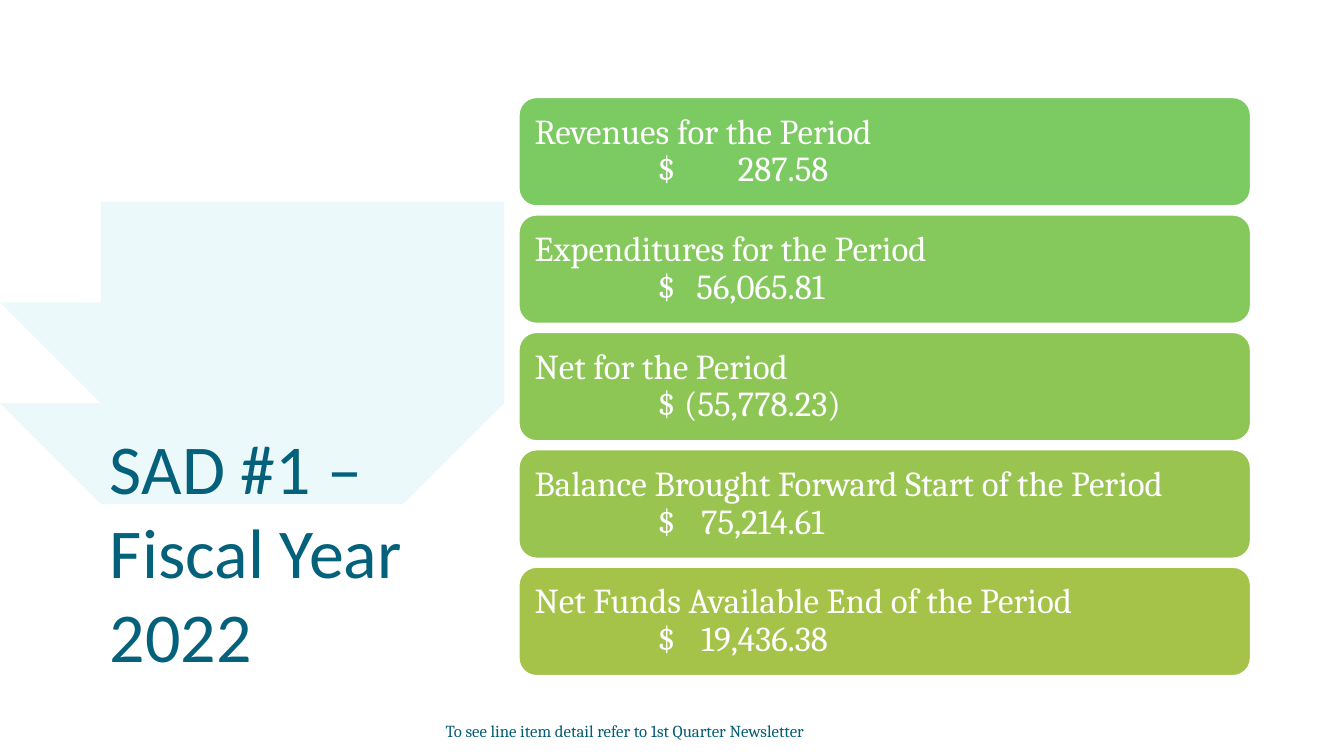
import pptx
import pptx.util
import pptx.dml.color
import pptx.enum.shapes
import pptx.enum.text
import pptx.oxml.ns
import lxml.etree

Inches = pptx.util.Inches
Pt = pptx.util.Pt
ANCHOR = pptx.enum.text.MSO_ANCHOR


def color(hex_string):
    return pptx.dml.color.RGBColor.from_string(hex_string)


def prepare_text(shape, anchor, left=0, bottom=0):
    frame = shape.text_frame
    frame.word_wrap = True
    frame.vertical_anchor = anchor
    frame.margin_left = Inches(left)
    frame.margin_right = frame.margin_top = 0
    frame.margin_bottom = Inches(bottom)
    return frame.paragraphs[0]


deck = pptx.Presentation()
deck.slide_width = Inches(13.33)
deck.slide_height = Inches(7.5)
slide = deck.slides.add_slide(deck.slide_layouts[6])

brush_outline = [
    (4.58, 1.5), (4.57, 1.59), (4.72, 1.59), (4.74, 1.77), (4.88, 1.98), (4.79, 2.25),
    (4.86, 2.35), (4.75, 2.49), (4.93, 2.6), (4.82, 2.89), (4.96, 2.95), (5.14, 3.3),
    (5.03, 3.61), (4.76, 3.99), (4.4, 4.51), (3.99, 4.85), (3.33, 5.22), (2.49, 5.42),
    (1.39, 5.38), (0.96, 5.18), (0.66, 5.05), (1.02, 5.04), (0.66, 4.86), (0.8, 4.84),
    (0.36, 4.49), (0.6, 4.53), (0.19, 4.29), (0.41, 4.27), (0.2, 4.17), (0.39, 4.11),
    (0.51, 3.96), (0.51, 3.72), (0.35, 3.6), (0.63, 3.52), (0.25, 3.29), (0.3, 3.06),
    (0.78, 3.08), (0.4, 2.77), (0.32, 2.54), (0.67, 2.74), (0.28, 2.26), (0.45, 2.27),
    (1.17, 2.71), (0.56, 2.23), (0.46, 1.82), (0.6, 1.83), (1.3, 2.25), (1.92, 2.34),
    (2.6, 2.27), (3.17, 2.17), (3.61, 2.03), (4.02, 1.82), (4.38, 1.69),
]
builder = slide.shapes.build_freeform(*brush_outline[0], scale=Inches(1))
builder.add_line_segments(brush_outline[1:], close=True)
brush = builder.convert_to_shape()
brush.shadow.inherit = False
brush.fill.solid()
brush.fill.fore_color.rgb = color("DBF5F9")
brush.line.fill.background()
brush_color = brush._element.spPr.find(".//" + pptx.oxml.ns.qn("a:srgbClr"))
lxml.etree.SubElement(brush_color, pptx.oxml.ns.qn("a:alpha"), val="50000")

captions = [
    ("SAD #1 – Fiscal Year 2022", 1.09, 0.75, 3.82, 6.01, 0.05, "Calibri", 50, "04617B"),
    ("To see line item detail refer to 1st Quarter Newsletter",
     4.42, 6.95, 4.5, 0.4, 0, "Cambria", 12, "045D75"),
]
for text, left, top, width, height, bottom, font, size, shade in captions:
    box = slide.shapes.add_textbox(Inches(left), Inches(top), Inches(width), Inches(height))
    para = prepare_text(box, ANCHOR.BOTTOM, bottom=bottom)
    para.text = text
    para.font.name = font
    para.font.size = Pt(size)
    para.font.color.rgb = color(shade)

balances = [
    ("Revenues for the Period", "287.58", "7CCA62"),
    ("Expenditures for the Period", "56,065.81", "85C85C"),
    ("Net for the Period", "(55,778.23)", "8EC656"),
    ("Balance Brought Forward Start of the Period", "75,214.61", "99C44F"),
    ("Net Funds Available End of the Period", "19,436.38", "A5C249"),
]
first_top = 0.96
pitch = (5.62 - first_top) / (len(balances) - 1)
for index, (label, amount, shade) in enumerate(balances):
    bar = slide.shapes.add_shape(
        pptx.enum.shapes.MSO_SHAPE.ROUNDED_RECTANGLE,
        Inches(5.14), Inches(first_top + index * pitch), Inches(7.27), Inches(1.09))
    bar.shadow.inherit = False
    bar.fill.solid()
    bar.fill.fore_color.rgb = color(shade)
    bar.line.color.rgb = color("FFFFFF")
    bar.line.width = Pt(2)
    para = prepare_text(bar, ANCHOR.MIDDLE, left=0.11)
    para.text = f"{label}\v\t$\t{amount}"
    para.alignment = pptx.enum.text.PP_ALIGN.LEFT
    para.line_spacing = 0.9
    tabs = lxml.etree.SubElement(para._p.get_or_add_pPr(), pptx.oxml.ns.qn("a:tabLst"))
    for position, align in [(1.22, "l"), (2.51, "dec")]:
        lxml.etree.SubElement(tabs, pptx.oxml.ns.qn("a:tab"),
                              pos=str(Inches(position)), algn=align)
    para.font.name = "Cambria"
    para.font.size = Pt(25)
    para.font.color.rgb = color("FFFFFF")

deck.save("out.pptx")
